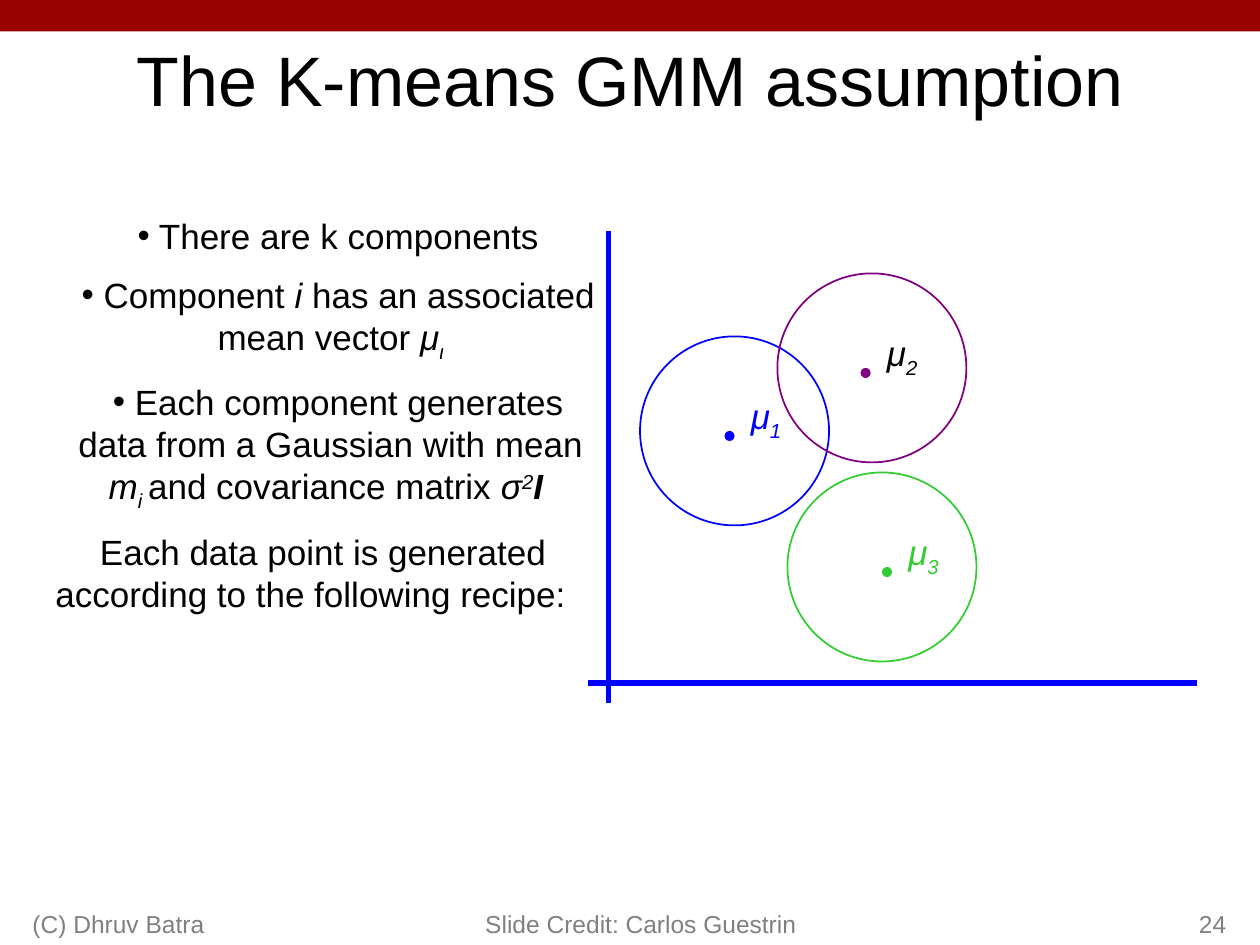
from lxml import etree
from pptx import Presentation
from pptx.dml.color import RGBColor as RGB
from pptx.enum.shapes import MSO_CONNECTOR as LINE, MSO_SHAPE as SHAPE
from pptx.enum.text import MSO_ANCHOR as ANCHOR, PP_ALIGN as ALIGN
from pptx.oxml.ns import qn
from pptx.util import Inches, Pt

COLORS = {"bar": "990000", "text": "000000", "gray": "808080",
          "blue": "0000FF", "purple": "800080", "green": "33CC33"}


def color(name):
    return RGB.from_string(COLORS[name])


def add_runs(para, parts, size, tint):
    """Add (text, style) parts; a style holds i, b, - (subscript) or + (superscript)."""
    for text, style in parts:
        run = para.add_run()
        run.text = text
        font = run.font
        font.name, font.size = "Arial", Pt(size)
        font.color.rgb = color(tint)
        font.italic, font.bold = "i" in style, "b" in style
        if "-" in style:
            font._element.set("baseline", "-25000")
        elif "+" in style:
            font._element.set("baseline", "30000")


prs = Presentation()
prs.slide_width, prs.slide_height = Inches(10), Inches(7.5)
slide = prs.slides.add_slide(prs.slide_layouts[5])
shapes = slide.shapes

# Top bar and title
bar = shapes.add_shape(SHAPE.RECTANGLE, 0, 0, Inches(10), Inches(0.25))
bar.shadow.inherit = False
bar.fill.solid()
bar.fill.fore_color.rgb = color("bar")
bar.line.fill.background()

title = shapes.title
title.left, title.top = Inches(0.75), Inches(0.25)
title.width, title.height = Inches(8.5), Inches(0.75)
frame = title.text_frame
frame.vertical_anchor = ANCHOR.MIDDLE
frame.paragraphs[0].alignment = ALIGN.CENTER
add_runs(frame.paragraphs[0], [("The K-means GMM assumption", "")], 40, "text")

# Points on the left: (has bullet, parts)
points = [
    (True, [(" There are k components", "")]),
    (True, [(" Component ", ""), ("i", "i"),
            (" has an associated mean vector ", ""), ("μ", "i"), ("ι", "i-")]),
    (True, [(" Each component generates data from a Gaussian with mean ", ""),
            ("m", "i"), ("i ", "i-"), ("and covariance matrix ", ""),
            ("σ", "i"), ("2", "i+"), ("Ι ", "ib")]),
    (False, [("Each data point is generated according to the following recipe: ", "")]),
]
box = shapes.add_textbox(Inches(0.17), Inches(1.65), Inches(4.67), Inches(3.27))
frame = box.text_frame
frame.word_wrap = True
for n, (bullet, parts) in enumerate(points):
    para = frame.add_paragraph() if n else frame.paragraphs[0]
    para.alignment = ALIGN.CENTER
    if n:
        para.space_before = Pt(10)
    props = para._p.get_or_add_pPr()
    props.set("marL", str(Inches(0.24 if bullet else 0)))
    props.set("indent", str(Inches(0.12)))
    if bullet:
        etree.SubElement(props, qn("a:buFont")).set("typeface", "Arial")
        etree.SubElement(props, qn("a:buChar")).set("char", "•")
    add_runs(para, parts, 20, "text")

# Axes
for x1, y1, x2, y2 in [(4.83, 1.83, 4.83, 5.58), (9.5, 5.42, 4.67, 5.42)]:
    axis = shapes.add_connector(LINE.STRAIGHT, Inches(x1), Inches(y1),
                                Inches(x2), Inches(y2))
    axis.line.color.rgb = color("blue")
    axis.line.width = Pt(3)
    etree.SubElement(axis._element.spPr, qn("a:effectLst"))

# Components: circle corner, mean point corner, colours of circle and label
comps = [(5.08, 2.67, 5.75, 3.42, "blue", "blue"),
         (6.17, 2.17, 6.83, 2.92, "purple", "text"),
         (6.25, 3.75, 7, 4.5, "green", "green")]
for n, (cx, cy, mx, my, tint, ink) in enumerate(comps, 1):
    dot = shapes.add_shape(SHAPE.OVAL, Inches(mx), Inches(my),
                           Inches(0.08), Inches(0.08))
    dot.shadow.inherit = False
    dot.fill.solid()
    dot.fill.fore_color.rgb = color(tint)
    dot.line.fill.background()

    label = shapes.add_textbox(Inches(mx + 0.08), Inches(my - 0.34),
                               Inches(0.5), Inches(0.43))
    label.text_frame.word_wrap = True
    para = label.text_frame.paragraphs[0]
    para.alignment = ALIGN.CENTER
    add_runs(para, [("μ", "i"), (str(n), "i-")], 20, ink)

    ring = shapes.add_shape(SHAPE.OVAL, Inches(cx), Inches(cy),
                            Inches(1.5), Inches(1.5))
    ring.shadow.inherit = False
    ring.fill.background()
    ring.line.color.rgb = color(tint)
    ring.line.width = Pt(1)

# Footer
notes = [("Slide Credit: Carlos Guestrin", 3.5, 2.92, ALIGN.RIGHT),
         ("(C) Dhruv Batra", 0.16, 3.17, ALIGN.LEFT),
         ("24", 7.75, 2.08, ALIGN.RIGHT)]
for text, left, width, align in notes:
    foot = shapes.add_textbox(Inches(left), Inches(7), Inches(width), Inches(0.5))
    frame = foot.text_frame
    frame.word_wrap = True
    frame.vertical_anchor = ANCHOR.BOTTOM
    frame.paragraphs[0].alignment = align
    add_runs(frame.paragraphs[0], [(text, "")], 14, "gray")

prs.save("out.pptx")
